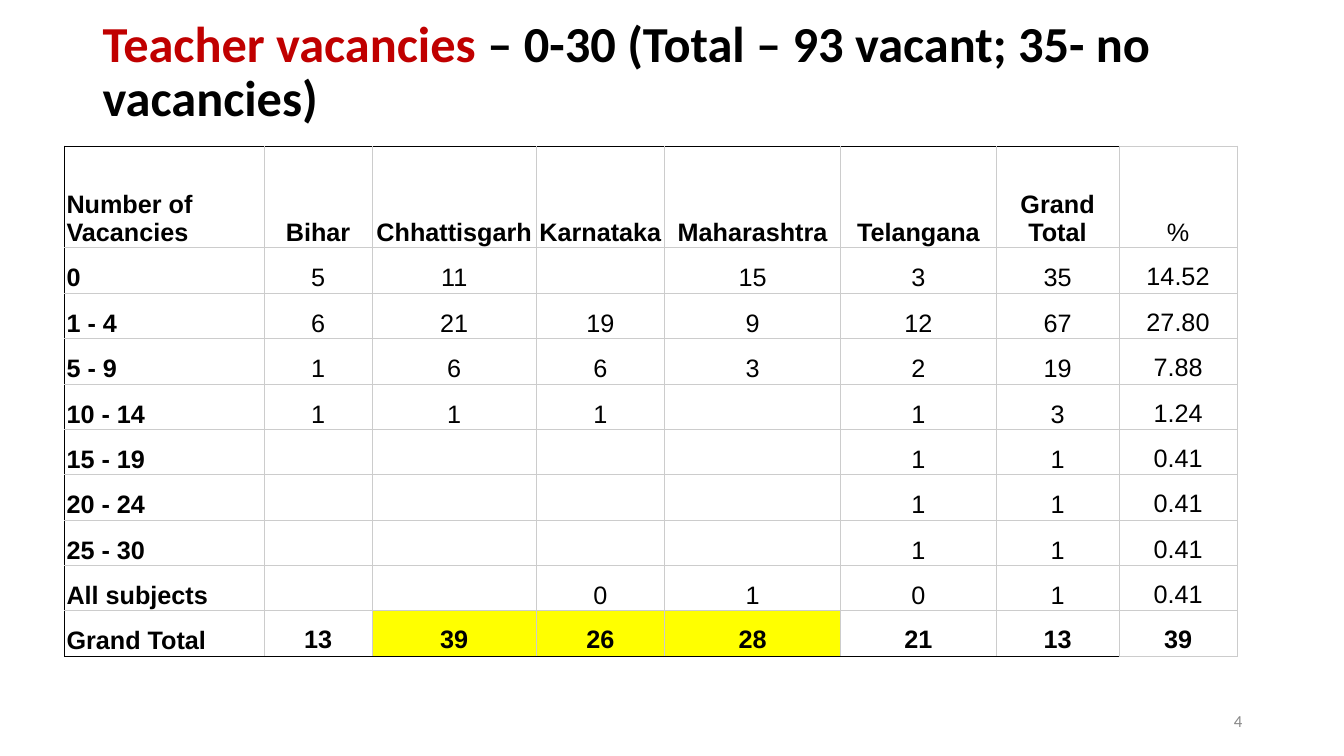
from lxml.etree import SubElement
from pptx import Presentation
from pptx.dml.color import RGBColor
from pptx.enum.text import MSO_ANCHOR, PP_ALIGN
from pptx.oxml.ns import qn
from pptx.util import Inches, Pt

COLORS = {
    "black": "000000",
    "red": "C00000",
    "gray": "888888",
    "grid": "CCCCCC",
    "highlight": "FFFF00",
}

COLUMN_WIDTHS = [1.98, 1.07, 1.63, 1.27, 1.75, 1.54, 1.22, 1.17]
HEADER_HEIGHT = 1.01
ROW_HEIGHT = 0.45
HIGHLIGHTED_COLUMNS = (2, 3, 4)

VACANCIES = [
    ["Number of Vacancies", "Bihar", "Chhattisgarh", "Karnataka",
     "Maharashtra", "Telangana", "Grand Total", "%"],
    ["0", "5", "11", "", "15", "3", "35", "14.52"],
    ["1 - 4", "6", "21", "19", "9", "12", "67", "27.80"],
    ["5 - 9", "1", "6", "6", "3", "2", "19", "7.88"],
    ["10 - 14", "1", "1", "1", "", "1", "3", "1.24"],
    ["15 - 19", "", "", "", "", "1", "1", "0.41"],
    ["20 - 24", "", "", "", "", "1", "1", "0.41"],
    ["25 - 30", "", "", "", "", "1", "1", "0.41"],
    ["All subjects", "", "", "0", "1", "0", "1", "0.41"],
    ["Grand Total", "13", "39", "26", "28", "21", "13", "39"],
]
LAST_ROW = len(VACANCIES) - 1
LAST_COLUMN = len(COLUMN_WIDTHS) - 1


def add_span(para, text, size, font, color, bold=False):
    span = para.add_run()
    span.text = text
    span.font.size = Pt(size)
    span.font.name = font
    span.font.bold = bold
    span.font.color.rgb = RGBColor.from_string(COLORS[color])


def add_text_box(page, left, top, width, height):
    box = page.shapes.add_textbox(
        Inches(left), Inches(top), Inches(width), Inches(height))
    frame = box.text_frame
    frame.word_wrap = True
    frame.vertical_anchor = MSO_ANCHOR.MIDDLE
    return frame.paragraphs[0]


def add_title(page, left, top, width, height):
    para = add_text_box(page, left, top, width, height)
    para.line_spacing = 0.9
    add_span(para, "Teacher vacancies ", 36, "Calibri", "red", True)
    add_span(para, "– 0-30 (Total – 93 vacant; 35- no vacancies)",
             36, "Calibri", "black", True)


def add_page_number(page, left, top, width, height):
    para = add_text_box(page, left, top, width, height)
    para.alignment = PP_ALIGN.RIGHT
    add_span(para, "4", 12, "Calibri", "gray")


def set_borders(cell, row, column):
    in_frame = column < LAST_COLUMN
    edges = {
        "a:lnL": column == 0,
        "a:lnR": False,
        "a:lnT": row == 0 and in_frame,
        "a:lnB": row == LAST_ROW and in_frame,
    }
    properties = cell._tc.get_or_add_tcPr()
    for edge, is_dark in edges.items():
        line = SubElement(properties, qn(edge), w=str(Pt(0.75)))
        fill = SubElement(line, qn("a:solidFill"))
        SubElement(fill, qn("a:srgbClr"),
                   val=COLORS["black" if is_dark else "grid"])


def fill_cell(cell, row, column, text):
    set_borders(cell, row, column)
    if row == LAST_ROW and column in HIGHLIGHTED_COLUMNS:
        cell.fill.solid()
        cell.fill.fore_color.rgb = RGBColor.from_string(COLORS["highlight"])
    else:
        cell.fill.background()

    is_label = column == 0
    is_summary = (row == LAST_ROW and not is_label) or (
        row > 0 and column == LAST_COLUMN)
    cell.margin_left = cell.margin_right = Inches(0.03 if is_summary else 0.02)
    cell.margin_top = cell.margin_bottom = Inches(0.02 if is_summary else 0.01)
    cell.vertical_anchor = MSO_ANCHOR.BOTTOM

    para = cell.text_frame.paragraphs[0]
    para.alignment = PP_ALIGN.LEFT if is_label else PP_ALIGN.CENTER
    is_bold = is_label or row == LAST_ROW or (row == 0 and column < LAST_COLUMN)
    if text:
        add_span(para, text, 18, "Arial", "black", is_bold)


def add_vacancy_table(page, left, top):
    heights = [HEADER_HEIGHT] + [ROW_HEIGHT] * LAST_ROW
    table = page.shapes.add_table(
        len(heights), len(COLUMN_WIDTHS), Inches(left), Inches(top),
        Inches(sum(COLUMN_WIDTHS)), Inches(sum(heights))).table
    table.first_row = False
    table.horz_banding = False
    for table_column, width in zip(table.columns, COLUMN_WIDTHS):
        table_column.width = Inches(width)
    for table_row, height in zip(table.rows, heights):
        table_row.height = Inches(height)
    for row, values in enumerate(VACANCIES):
        for column, text in enumerate(values):
            fill_cell(table.cell(row, column), row, column, text)


def main():
    deck = Presentation()
    deck.slide_width = Inches(13.33)
    deck.slide_height = Inches(7.5)
    page = deck.slides.add_slide(deck.slide_layouts[6])
    add_title(page, 0.92, 0, 11.5, 1.45)
    add_page_number(page, 9.42, 6.95, 3, 0.4)
    add_vacancy_table(page, 0.64, 1.45)
    deck.save("out.pptx")


if __name__ == "__main__":
    main()
